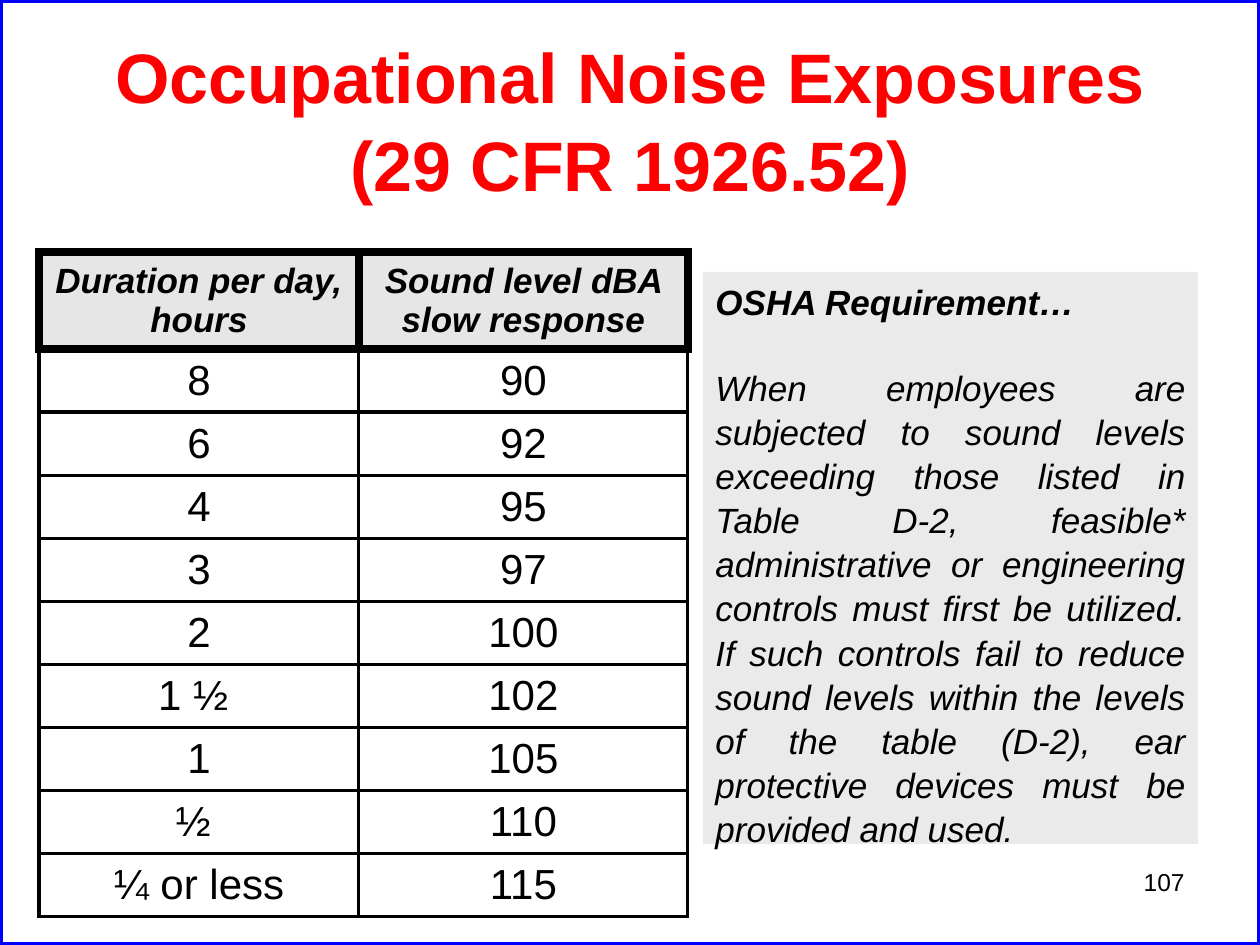
from pptx import Presentation
from pptx.dml.color import RGBColor
from pptx.enum.shapes import MSO_SHAPE as Shape
from pptx.enum.text import MSO_ANCHOR as Anchor, PP_ALIGN as Align
from pptx.oxml.ns import qn
from pptx.util import Pt
from lxml.etree import SubElement

EMU_PER_PX = 914400 / 126
BLACK = "000000"
LIMITS = [
    ("8", "90"), ("6", "92"), ("4", "95"), ("3", "97"), ("2", "100"),
    ("1 ½ ", "102"), ("1", "105"), ("½ ", "110"), ("¼ or less", "115"),
]
REQUIREMENT = (
    "When employees are subjected to sound levels exceeding those listed in "
    "Table D-2, feasible* administrative or engineering controls must first "
    "be utilized. If such controls fail to reduce sound levels within the "
    "levels of the table (D-2), ear protective devices must be provided and used."
)


def px(*lengths):
    return [round(length * EMU_PER_PX) for length in lengths]


def color(value):
    return RGBColor.from_string(value)


def style(para, size, align, hue=BLACK, bold=False, italic=False):
    para.alignment = align
    for span in para.runs:
        font = span.font
        font.name, font.size = "Arial", Pt(size)
        font.bold, font.italic = bold, italic
        font.color.rgb = color(hue)


def add_text(page, bounds, text, size, align, anchor=Anchor.TOP, **look):
    box = page.shapes.add_textbox(*px(*bounds))
    frame = box.text_frame
    frame.word_wrap = True
    frame.vertical_anchor = anchor
    frame.text = text
    style(frame.paragraphs[0], size, align, **look)
    return box


def add_border(page):
    border = page.shapes.add_shape(Shape.RECTANGLE, *px(0, 0, 1260, 945))
    border.shadow.inherit = False
    border.fill.background()
    border.line.color.rgb = color("0000FF")
    border.line.width = Pt(3)


def add_requirement(page):
    box = add_text(page, (703, 272, 495, 572), "OSHA Requirement…", 20,
                   Align.JUSTIFY, bold=True, italic=True)
    box.fill.solid()
    box.fill.fore_color.rgb = color("EAEAEA")
    body = box.text_frame.add_paragraph()
    body.text = REQUIREMENT
    body.space_before = Pt(24)
    style(body, 20, Align.JUSTIFY, italic=True)
    for para in box.text_frame.paragraphs:
        para.line_spacing = 1.05


def set_borders(cell, top, other):
    """Draw all four edges; widths are in points."""
    props = cell._tc.get_or_add_tcPr()
    for index, side in enumerate(("lnL", "lnR", "lnT", "lnB")):
        width = top if side == "lnT" else other
        edge = props.makeelement(qn(f"a:{side}"), {"w": str(Pt(width))})
        fill = SubElement(edge, qn("a:solidFill"))
        SubElement(fill, qn("a:srgbClr"), val=BLACK)
        props.insert(index, edge)


def add_limits(page):
    rows = [("Duration per day, hours", "Sound level dBA slow response"), *LIMITS]
    widths, heights = (320, 329), [97] + [63] * len(LIMITS)
    table = page.shapes.add_table(
        len(rows), len(widths), *px(39, 252, sum(widths), sum(heights))).table
    table.horz_banding = False
    for column, width in zip(table.columns, px(*widths)):
        column.width = width
    for r, (height, texts) in enumerate(zip(px(*heights), rows)):
        table.rows[r].height = height
        header = r == 0
        for c, text in enumerate(texts):
            cell = table.cell(r, c)
            cell.text = text
            cell.vertical_anchor = Anchor.MIDDLE
            style(cell.text_frame.paragraphs[0], 20 if header else 24,
                  Align.CENTER, bold=header, italic=header)
            if header:
                cell.fill.solid()
                cell.fill.fore_color.rgb = color("E6E6E6")
            else:
                cell.fill.background()
            set_borders(cell, 5 if r < 2 else 2, 5 if header else 2)


def main():
    deck = Presentation()
    deck.slide_width, deck.slide_height = px(1260, 945)
    page = deck.slides.add_slide(deck.slide_layouts[6])
    add_border(page)
    add_text(page, (903, 861, 294, 66), "107", 14, Align.RIGHT)
    title = add_text(page, (63, 38, 1134, 158),
                     "Occupational Noise Exposures (29 CFR 1926.52)", 40,
                     Align.CENTER, Anchor.MIDDLE, hue="FF0000", bold=True)
    title.text_frame.paragraphs[0].line_spacing = 1.05
    add_requirement(page)
    add_limits(page)
    deck.save("out.pptx")


if __name__ == "__main__":
    main()
